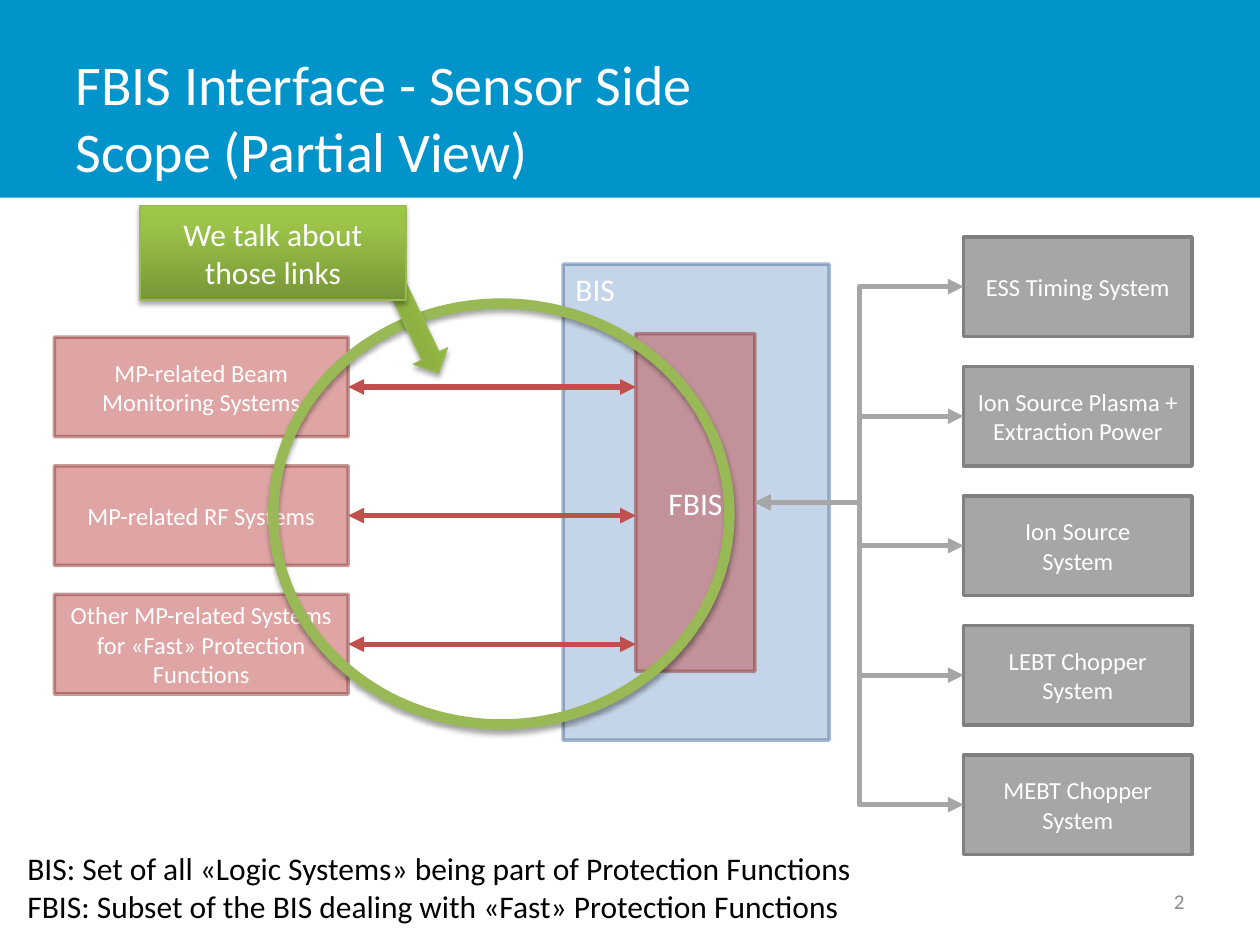
from copy import deepcopy

from lxml.etree import SubElement
from pptx import Presentation
from pptx.dml.color import RGBColor
from pptx.enum.shapes import MSO_CONNECTOR as LINK, MSO_SHAPE as SHAPE
from pptx.enum.text import MSO_ANCHOR as ANCHOR, PP_ALIGN as ALIGN
from pptx.oxml.ns import qn
from pptx.util import Pt

WHITE = RGBColor(0xFF, 0xFF, 0xFF)
BLACK = RGBColor(0x00, 0x00, 0x00)
BANNER = RGBColor(0x00, 0x94, 0xCA)
BLUE = RGBColor(0x4F, 0x81, 0xBD)
DARK_BLUE = RGBColor(0x3A, 0x5F, 0x8C)
RED = RGBColor(0xC0, 0x50, 0x4D)
DARK_RED = RGBColor(0x8E, 0x3B, 0x39)
GREY = RGBColor(0xA6, 0xA6, 0xA6)
DARK_GREY = RGBColor(0x80, 0x80, 0x80)
NUMBER_GREY = RGBColor(0x8C, 0x8C, 0x8C)
GREEN = RGBColor(0x98, 0xB9, 0x55)
GREEN_STOPS = [
    (0, RGBColor(0x77, 0x97, 0x37)),
    (0.8, RGBColor(0x9B, 0xC3, 0x48)),
    (1, RGBColor(0x9D, 0xC7, 0x46)),
]

TITLE = "FBIS Interface - Sensor Side\vScope (Partial View)"
CALLOUT = "We talk about those links"
LEGEND = (
    "BIS: Set of all «Logic Systems» being part of Protection Functions\n"
    "FBIS: Subset of the BIS dealing with «Fast» Protection Functions"
)
SENSOR_SYSTEMS = [
    "MP-related Beam Monitoring Systems",
    "MP-related RF Systems",
    "Other MP-related Systems for «Fast» Protection Functions",
]
OTHER_SYSTEMS = [
    "ESS Timing System",
    "Ion Source Plasma + Extraction Power",
    "Ion Source\nSystem",
    "LEBT Chopper System",
    "MEBT Chopper\nSystem",
]

# Left, top, width, height in points
BIS_AREA = (321.8, 151, 152, 272)
FBIS_AREA = (363.4, 190.6, 68, 193)
SENSOR_LEFT, SENSOR_TOP, SENSOR_WIDTH, SENSOR_PITCH = 31, 192.7, 168, 73.5
OTHER_LEFT, OTHER_TOP, OTHER_WIDTH, OTHER_PITCH = 550.6, 135.4, 130.6, 74
SYSTEM_HEIGHT = 56.9

RED_STYLE = {"fill": RED, "line": DARK_RED, "fill_alpha": 51, "line_alpha": 51}
BLUE_STYLE = {"fill": BLUE, "line": DARK_BLUE, "fill_alpha": 33, "line_alpha": 43}
GREY_STYLE = {"fill": GREY, "line": DARK_GREY}

deck = Presentation()
deck.slide_width, deck.slide_height = Pt(720), Pt(540)
slide = deck.slides.add_slide(deck.slide_layouts[6])
shapes = slide.shapes


def points(values):
    return [Pt(value) for value in values]


def write(shape, text, size, color=WHITE, align=ALIGN.CENTER, anchor=ANCHOR.MIDDLE, wrap=True):
    frame = shape.text_frame
    frame.text = text
    frame.word_wrap = wrap
    frame.vertical_anchor = anchor
    for paragraph in frame.paragraphs:
        paragraph.alignment = align
        for run in paragraph.runs:
            font = run.font
            font.name, font.size, font.color.rgb = "Calibri", Pt(size), color


def add_shape(kind, area, fill=None, line=None, width=2, fill_alpha=100, line_alpha=100):
    shape = shapes.add_shape(kind, *points(area))
    shape.shadow.inherit = False
    properties = shape._element.spPr
    for part, color, alpha in (
        (shape.fill, fill, fill_alpha),
        (shape.line.fill, line, line_alpha),
    ):
        if color is None:
            part.background()
            continue
        part.solid()
        part.fore_color.rgb = color
        if alpha < 100:
            owner = properties if part is shape.fill else properties.find(qn("a:ln"))
            tint = owner.find(qn("a:solidFill")).find(qn("a:srgbClr"))
            SubElement(tint, qn("a:alpha"), val=str(alpha * 1000))
    if line is not None:
        shape.line.width = Pt(width)
    return shape


def add_text(area, text, size, **options):
    write(shapes.add_textbox(*points(area)), text, size, **options)


def add_double_arrow(kind, color, ends):
    arrow = shapes.add_connector(kind, *points(ends))
    arrow.line.color.rgb = color
    arrow.line.width = Pt(3)
    outline = arrow.line._get_or_add_ln()
    for end in ("a:headEnd", "a:tailEnd"):
        SubElement(outline, qn(end), type="triangle")
    SubElement(arrow._element.spPr, qn("a:effectLst"))
    return arrow


def drop_shadow(shape):
    effects = shape._element.spPr.find(qn("a:effectLst"))
    shadow = SubElement(
        effects, qn("a:outerShdw"), blurRad=str(Pt(3.1)), dist=str(Pt(1.8)),
        dir="5400000", rotWithShape="0",
    )
    tint = SubElement(shadow, qn("a:srgbClr"), val=str(BLACK))
    SubElement(tint, qn("a:alpha"), val="35000")


def shade_green(shape):
    shape.fill.gradient()
    shape.fill.gradient_angle = 90
    stop_list = shape._element.spPr.find(qn("a:gradFill")).find(qn("a:gsLst"))
    stop_list.append(deepcopy(stop_list[-1]))
    for stop, (position, color) in zip(shape.fill.gradient_stops, GREEN_STOPS):
        stop.position = position
        stop.color.rgb = color


def add_system(text, area, style):
    box = add_shape(SHAPE.RECTANGLE, area, **style)
    write(box, text, 14)
    return box


def main():
    add_shape(SHAPE.RECTANGLE, (0, 0, 720, 113), fill=BANNER)
    bis = add_shape(SHAPE.RECTANGLE, BIS_AREA, **BLUE_STYLE)
    write(bis, "BIS", 18, align=ALIGN.LEFT, anchor=ANCHOR.TOP)
    add_text((36, 21.6, 562, 90), TITLE, 32, align=ALIGN.LEFT)
    add_text((516, 500.5, 168, 28.8), "2", 12, color=NUMBER_GREY, align=ALIGN.RIGHT)
    fbis = add_shape(SHAPE.RECTANGLE, FBIS_AREA, **RED_STYLE)
    write(fbis, "FBIS", 18)

    for row, name in enumerate(SENSOR_SYSTEMS):
        top = SENSOR_TOP + row * SENSOR_PITCH
        middle = top + SYSTEM_HEIGHT / 2
        add_system(name, (SENSOR_LEFT, top, SENSOR_WIDTH, SYSTEM_HEIGHT), RED_STYLE)
        ends = (SENSOR_LEFT + SENSOR_WIDTH, middle, FBIS_AREA[0], middle)
        add_double_arrow(LINK.STRAIGHT, RED, ends)

    fbis_right = FBIS_AREA[0] + FBIS_AREA[2]
    fbis_middle = FBIS_AREA[1] + FBIS_AREA[3] / 2
    for row, name in enumerate(OTHER_SYSTEMS):
        top = OTHER_TOP + row * OTHER_PITCH
        box = add_system(name, (OTHER_LEFT, top, OTHER_WIDTH, SYSTEM_HEIGHT), GREY_STYLE)
        ends = (fbis_right, fbis_middle, OTHER_LEFT, top + SYSTEM_HEIGHT / 2)
        arrow = add_double_arrow(LINK.ELBOW, GREY, ends)
        arrow.begin_connect(fbis, 3)
        arrow.end_connect(box, 1)

    link_ring = add_shape(SHAPE.OVAL, (156.2, 173.5, 260.6, 240.5), line=GREEN, width=6)
    add_text((8.6, 481.7, 489.6, 51), LEGEND, 18, color=BLACK, align=ALIGN.LEFT,
             anchor=ANCHOR.TOP, wrap=False)
    pointer = add_shape(SHAPE.RIGHT_ARROW, (194.4, 167, 78.5, 21.6), line=GREEN, width=0.75)
    pointer.rotation = 64.4
    callout = add_shape(SHAPE.RECTANGLE, (80, 117.4, 152, 54), line=GREEN, width=0.75)
    write(callout, CALLOUT, 18)
    for shape in (pointer, callout):
        shade_green(shape)
    for shape in (link_ring, pointer, callout):
        drop_shadow(shape)

    deck.save("out.pptx")


if __name__ == "__main__":
    main()
